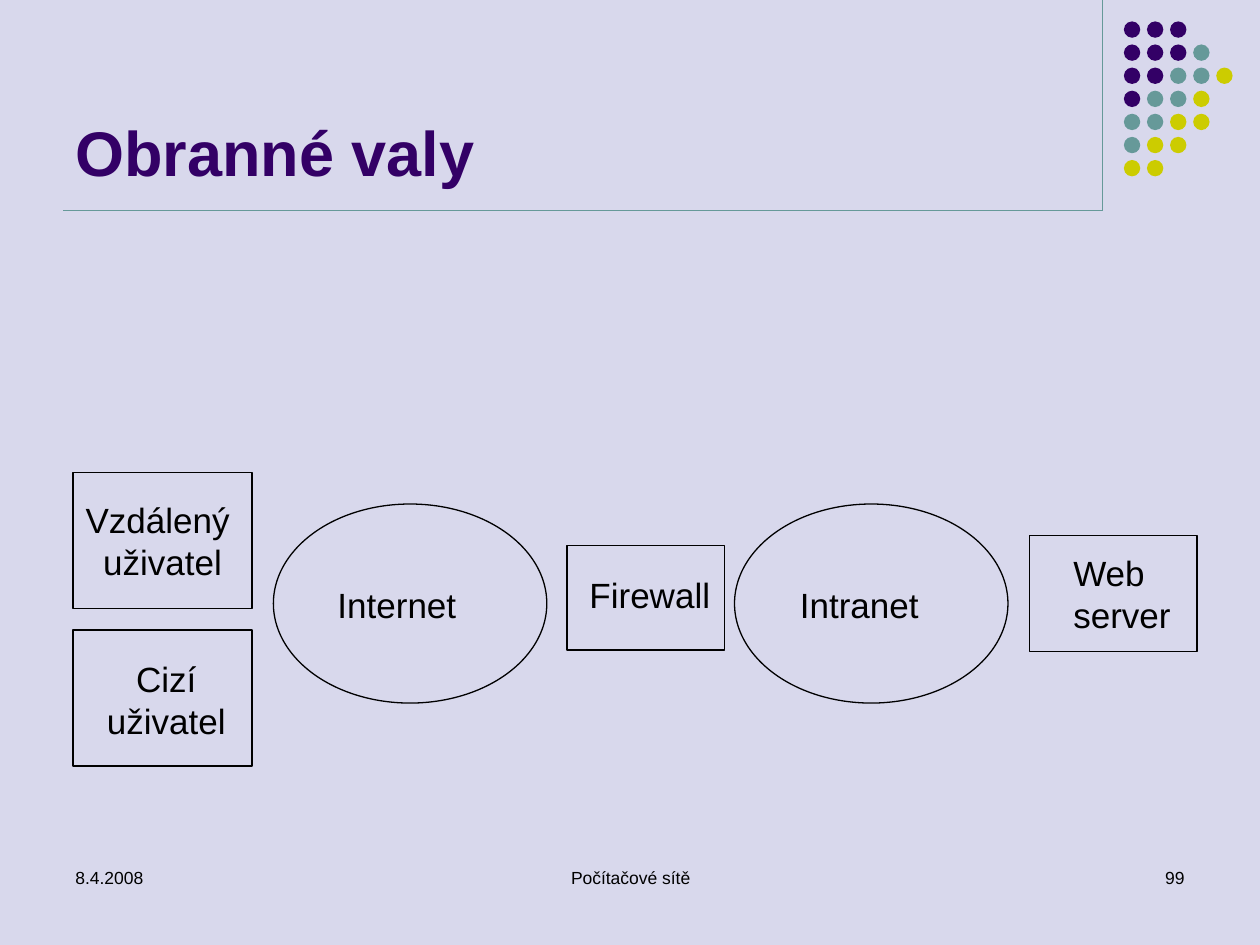
"""Build the firewall slide: users, Internet, firewall, intranet and web server."""
from dataclasses import dataclass

import lxml.etree
import pptx
import pptx.dml.color
import pptx.enum.shapes
import pptx.enum.text
import pptx.oxml.ns
import pptx.util

Inches = pptx.util.Inches
Shape = pptx.enum.shapes.MSO_SHAPE
Align = pptx.enum.text.PP_ALIGN
Anchor = pptx.enum.text.MSO_ANCHOR
Box = tuple[float, float, float, float]


@dataclass(frozen=True)
class Theme:
    background: str = "D8D8EC"
    purple: str = "330066"
    teal: str = "669999"
    yellow: str = "CCCC00"
    ink: str = "000000"
    font: str = "Arial"
    title_size: float = 36
    label_size: float = 20
    footer_size: float = 10
    line_width: float = 0.75


@dataclass(frozen=True)
class Node:
    kind: Shape
    box: Box
    text: str
    text_box: Box
    align: Align = Align.LEFT


THEME = Theme()
NODES = (
    Node(Shape.RECTANGLE, (0.58, 3.75, 1.42, 1.08), "Vzdálený \nuživatel",
         (0.58, 3.91, 1.42, 0.77), Align.CENTER),
    Node(Shape.RECTANGLE, (0.58, 5, 1.42, 1.08), "Cizí\nuživatel",
         (0.73, 5.17, 1.18, 0.77), Align.CENTER),
    Node(Shape.OVAL, (2.17, 4, 2.17, 1.58), "Internet", (2.58, 4.58, 1.18, 0.43)),
    Node(Shape.RECTANGLE, (4.5, 4.33, 1.25, 0.83), "Firewall", (4.58, 4.5, 1.18, 0.43)),
    Node(Shape.OVAL, (5.83, 4, 2.17, 1.58), "Intranet", (6.25, 4.58, 1.18, 0.43)),
    Node(Shape.RECTANGLE, (8.17, 4.25, 1.33, 0.92), "Web\nserver", (8.42, 4.33, 1, 0.77)),
)
FOOTERS = (
    ("8.4.2008", (0.5, 6.83, 2.33, 0.5), Align.LEFT),
    ("Počítačové sítě", (3.42, 6.83, 3.17, 0.5), Align.CENTER),
    ("99", (7.17, 6.83, 2.33, 0.5), Align.RIGHT),
)
DOT_ROWS = ("PPP", "PPPT", "PPTTY", "PTTY", "TTYY", "TYY", "YY")
DOT_COLORS = {"P": THEME.purple, "T": THEME.teal, "Y": THEME.yellow}
DOT_LEFT, DOT_TOP, DOT_SIZE, DOT_STEP = 8.92, 0.17, 0.13, 0.55 / 3


def rgb(color: str) -> pptx.dml.color.RGBColor:
    """Return a colour object for a hex string."""
    return pptx.dml.color.RGBColor.from_string(color)


def add_text(slide, text: str, box: Box, *, size: float, color: str = THEME.ink,
             bold: bool = False, align: Align = Align.LEFT,
             anchor: Anchor = Anchor.TOP, wrap: bool = True) -> None:
    """Add a text box with one paragraph per line of text."""
    tf = slide.shapes.add_textbox(*map(Inches, box)).text_frame
    tf.word_wrap = wrap
    tf.vertical_anchor = anchor
    if not wrap:
        tf.auto_size = pptx.enum.text.MSO_AUTO_SIZE.SHAPE_TO_FIT_TEXT
    for i, line in enumerate(text.split("\n")):
        p = tf.add_paragraph() if i else tf.paragraphs[0]
        p.alignment = align
        r = p.add_run()
        r.text = line
        r.font.name = THEME.font
        r.font.size = pptx.util.Pt(size)
        r.font.bold = bold
        r.font.color.rgb = rgb(color)


def add_shape(slide, kind: Shape, box: Box, *, fill: str | None = None,
              line: str | None = None) -> None:
    """Add a preset shape with an optional fill and outline."""
    sp = slide.shapes.add_shape(kind, *map(Inches, box))
    sp.shadow.inherit = False
    if fill:
        sp.fill.solid()
        sp.fill.fore_color.rgb = rgb(fill)
    else:
        sp.fill.background()
    if line:
        sp.line.color.rgb = rgb(line)
        sp.line.width = pptx.util.Pt(THEME.line_width)
    else:
        sp.line.fill.background()


def add_rule(slide, x1: float, y1: float, x2: float, y2: float) -> None:
    """Add a thin teal rule."""
    rule = slide.shapes.add_connector(
        pptx.enum.shapes.MSO_CONNECTOR.STRAIGHT, *map(Inches, (x1, y1, x2, y2)))
    rule.line.color.rgb = rgb(THEME.teal)
    rule.line.width = pptx.util.Pt(THEME.line_width)
    lxml.etree.SubElement(rule._element.spPr, pptx.oxml.ns.qn("a:effectLst"))


def add_dots(slide) -> None:
    """Add the corner grid of coloured dots."""
    for row, codes in enumerate(DOT_ROWS):
        for col, code in enumerate(codes):
            box = (DOT_LEFT + col * DOT_STEP, DOT_TOP + row * DOT_STEP, DOT_SIZE, DOT_SIZE)
            add_shape(slide, Shape.OVAL, box, fill=DOT_COLORS[code])


def add_node(slide, node: Node) -> None:
    """Add an outlined network node and its label."""
    add_shape(slide, node.kind, node.box, line=THEME.ink)
    add_text(slide, node.text, node.text_box, size=THEME.label_size,
             align=node.align, wrap=False)


def main() -> None:
    """Build and save the slide."""
    prs = pptx.Presentation()
    prs.slide_width, prs.slide_height = Inches(10), Inches(7.5)
    slide = prs.slides.add_slide(prs.slide_layouts[6])
    slide.background.fill.solid()
    slide.background.fill.fore_color.rgb = rgb(THEME.background)
    add_rule(slide, 8.75, 0, 8.75, 1.67)
    add_dots(slide)
    add_rule(slide, 0.5, 1.67, 8.75, 1.67)
    for text, box, align in FOOTERS:
        add_text(slide, text, box, size=THEME.footer_size, align=align)
    add_text(slide, "Obranné valy", (0.5, 0.13, 8.25, 1.42), size=THEME.title_size,
             color=THEME.purple, bold=True, anchor=Anchor.BOTTOM)
    for node in NODES:
        add_node(slide, node)
    prs.save("out.pptx")


if __name__ == "__main__":
    main()
